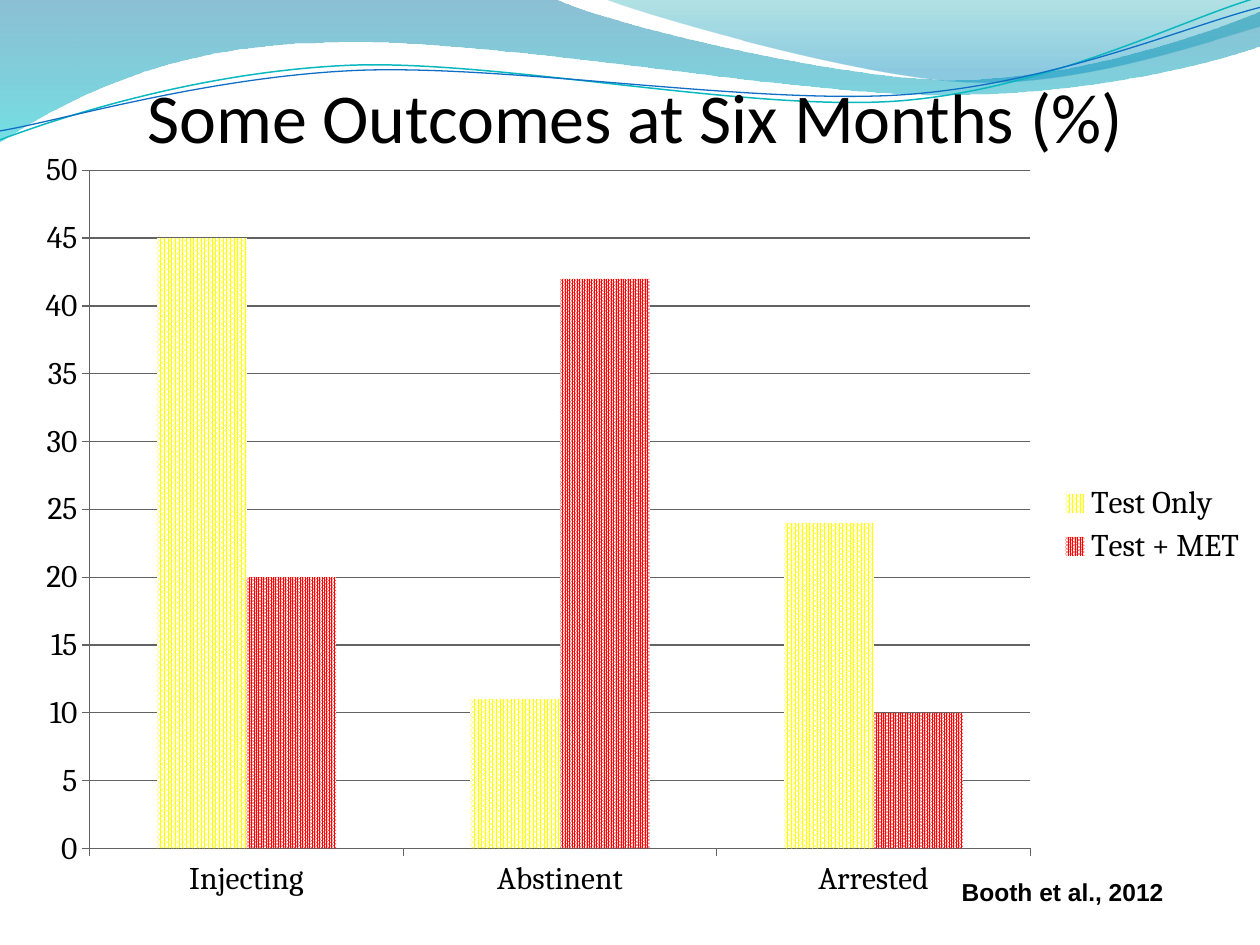
import pptx
import pptx.chart.data
import pptx.dml.color
import pptx.enum.chart
import pptx.enum.dml
import pptx.enum.text
import pptx.oxml.ns
import pptx.util
from pptx.util import Cm

COLORS = {
    "text": "000000", "white": "FFFFFF", "axis": "636363",
    "yellow": "FFFF00", "red": "FF0000",
    "deep blue": "0074A1", "turquoise": "00C6CF",
    "sea green": "00A1A9", "sky blue": "008BBF",
    "teal line": "0AB8BF", "blue line": "0F6FC6",
}
CURVE_TILT = -2.7

# Each wave: start point, then segments of one point (line) or three (cubic curve), in cm.
LEFT_WAVE = ((0, -0.03), [
    [(11.18, -0.03)],
    [(12.09, 0.43), (16.87, 1.6), (19.25, 1.6)],
    [(21.67, 1.6), (24.33, 0.66), (25.4, 0.23)],
    [(25.43, 0.91)],
    [(24.97, 1.12), (22.1, 1.93), (18.95, 1.91)],
    [(15.8, 1.91), (9.7, 0.71), (6.53, 0.86)],
    [(3.28, 0.89), (1.17, 2.11), (-0.03, 2.87)],
    [(0, -0.03)],
])
RIGHT_WAVE = ((12.17, -0.03), [
    [(12.93, 0.28), (17.32, 1.57), (19.53, 1.65)],
    [(21.74, 1.75), (24.41, 0.81), (25.4, 0.53)],
    [(25.4, 0)],
    [(12.17, -0.03)],
])
# The two curves are given before they are tilted.
TEAL_CURVE = ((-0.05, 2.22), [
    [(1.19, 1.82), (4.02, 1.04), (7.05, 1.05)],
    [(10.05, 1.07), (15.02, 2.37), (18.08, 2.29)],
    [(21.13, 2.2), (23.87, 0.91), (25.41, 0.55)],
])
BLUE_CURVE = ((-0.04, 2.04), [
    [(1.16, 1.9), (4.18, 1.15), (7.2, 1.16)],
    [(10.25, 1.18), (15.13, 2.23), (18.18, 2.17)],
    [(21.21, 2.1), (23.93, 1.06), (25.45, 0.75)],
])


def rgb(name):
    return pptx.dml.color.RGBColor.from_string(COLORS[name])


def bend(shape, segments):
    """Turn each run of three line points into one cubic curve."""
    outline = next(shape.element.iter(pptx.oxml.ns.qn("a:path")))
    lines = iter(outline.findall(pptx.oxml.ns.qn("a:lnTo")))
    for segment in segments:
        parts = [next(lines) for _ in segment]
        if len(parts) == 3:
            curve = outline.makeelement(pptx.oxml.ns.qn("a:cubicBezTo"), {})
            parts[0].addprevious(curve)
            for part in parts:
                curve.append(part[0])
                outline.remove(part)


def write_text(frame, text, font="Calibri", size=18, bold=False, color="text",
               align="LEFT", anchor="TOP"):
    frame.word_wrap = True
    frame.vertical_anchor = getattr(pptx.enum.text.MSO_ANCHOR, anchor)
    paragraph = frame.paragraphs[0]
    paragraph.alignment = getattr(pptx.enum.text.PP_ALIGN, align)
    run = paragraph.add_run()
    run.text = text
    run.font.name, run.font.size, run.font.bold = font, pptx.util.Pt(size), bold
    run.font.color.rgb = rgb(color)


class SlideBuilder:
    def __init__(self, slide, chart_font="Cambria", chart_size=18):
        self.slide = slide
        self.chart_font = chart_font
        self.chart_size = pptx.util.Pt(chart_size)

    def outline(self, start, segments, closed):
        builder = self.slide.shapes.build_freeform(*map(Cm, start))
        points = [(Cm(x), Cm(y)) for segment in segments for x, y in segment]
        builder.add_line_segments(points, close=closed)
        shape = builder.convert_to_shape()
        bend(shape, segments)
        shape.shadow.inherit = False
        return shape

    def wave(self, path, stops):
        """Fill a path downwards with (position, colour, opacity percent) stops."""
        shape = self.outline(*path, closed=True)
        shape.line.fill.background()
        shape.fill.gradient()
        shape.fill.gradient_angle = 270
        for stop, (position, color, _) in zip(shape.fill.gradient_stops, stops):
            stop.position = position
            stop.color.rgb = rgb(color)
        gradient = shape.element.spPr.find(pptx.oxml.ns.qn("a:gradFill"))
        for element, (_, _, opacity) in zip(gradient.iter(pptx.oxml.ns.qn("a:srgbClr")), stops):
            alpha = element.makeelement(pptx.oxml.ns.qn("a:alpha"), {"val": str(opacity * 1000)})
            element.append(alpha)

    def curve(self, path, color, width):
        shape = self.outline(*path, closed=False)
        shape.rotation = CURVE_TILT
        shape.fill.background()
        shape.line.color.rgb = rgb(color)
        shape.line.width = pptx.util.Pt(width)

    def title(self, text, left, top, width, height):
        title = self.slide.shapes.title
        title.left, title.top, title.width, title.height = left, top, width, height
        frame = title.text_frame
        frame.auto_size = pptx.enum.text.MSO_AUTO_SIZE.NONE
        frame.margin_left = frame.margin_right = frame.margin_bottom = 0
        write_text(frame, text, size=40, align="CENTER", anchor="BOTTOM")
        title.element.getparent().append(title.element)  # in front of the waves

    def text(self, text, left, top, width, height, **style):
        box = self.slide.shapes.add_textbox(left, top, width, height)
        box.text_frame.auto_size = pptx.enum.text.MSO_AUTO_SIZE.SHAPE_TO_FIT_TEXT
        write_text(box.text_frame, text, **style)

    def column_chart(self, categories, series, left, top, width, height):
        """Draw columns from (name, values, pattern, colour) series."""
        data = pptx.chart.data.CategoryChartData()
        data.categories = categories
        for name, values, _, _ in series:
            data.add_series(name, values)
        chart = self.slide.shapes.add_chart(
            pptx.enum.chart.XL_CHART_TYPE.COLUMN_CLUSTERED, left, top, width, height, data).chart
        chart.has_title = False
        chart.font.name, chart.font.size = self.chart_font, self.chart_size
        chart.font.color.rgb = rgb("text")
        chart.has_legend = True
        chart.legend.position = pptx.enum.chart.XL_LEGEND_POSITION.RIGHT
        chart.legend.include_in_layout = False

        values_axis = chart.value_axis
        values_axis.minimum_scale, values_axis.maximum_scale = 0, 50
        values_axis.major_unit = 5
        values_axis.has_major_gridlines = True
        for axis in (chart.category_axis, values_axis):
            axis.major_tick_mark = pptx.enum.chart.XL_TICK_MARK.OUTSIDE
        for part in (chart.category_axis, values_axis, values_axis.major_gridlines):
            part.format.line.color.rgb = rgb("axis")
            part.format.line.width = pptx.util.Pt(0.75)

        plot = chart.plots[0]
        plot.gap_width, plot.overlap, plot.vary_by_categories = 150, 0, False
        for columns, (_, _, pattern, color) in zip(plot.series, series):
            fill = columns.format.fill
            fill.patterned()
            fill.pattern = pattern
            fill.fore_color.rgb = rgb(color)
            fill.back_color.rgb = rgb("white")


def main():
    presentation = pptx.Presentation()
    presentation.slide_width, presentation.slide_height = Cm(25.4), Cm(19.05)
    builder = SlideBuilder(presentation.slides.add_slide(presentation.slide_layouts[5]))

    builder.wave(LEFT_WAVE, [(0, "deep blue", 45), (1, "turquoise", 55)])
    builder.wave(RIGHT_WAVE, [(0, "sea green", 30), (0.8, "sky blue", 45)])
    builder.curve(TEAL_CURVE, "teal line", 0.85)
    builder.curve(BLUE_CURVE, "blue line", 0.75)
    builder.title("Some Outcomes at Six Months (%)", Cm(0.2), Cm(0), Cm(25.2), Cm(3.18))

    patterns = pptx.enum.dml.MSO_PATTERN
    builder.column_chart(
        ["Injecting", "Abstinent", "Arrested"],
        [("Test Only", (45, 11, 24), patterns.PERCENT_80, "yellow"),
         ("Test + MET", (20, 42, 10), patterns.PERCENT_90, "red")],
        Cm(0.42), Cm(2.75), Cm(24.98), Cm(15.66))
    builder.text("Booth et al., 2012", Cm(12.91), Cm(17.55), Cm(10.8), Cm(0.86),
                 font="Arial", size=14, bold=True, align="RIGHT")
    presentation.save("out.pptx")


if __name__ == "__main__":
    main()
